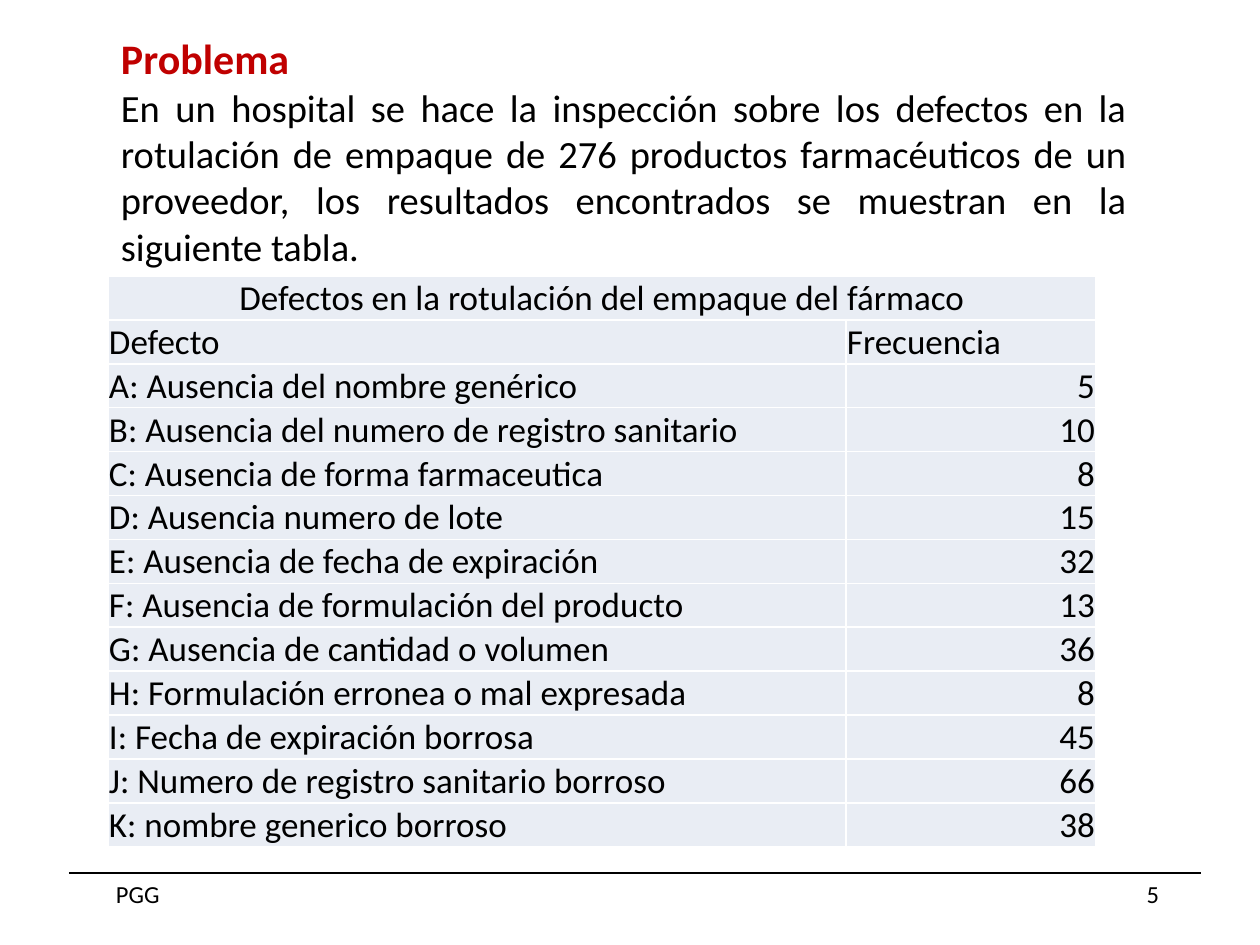
from dataclasses import dataclass

from lxml.etree import SubElement
from pptx import Presentation
from pptx.dml.color import RGBColor
from pptx.enum.shapes import MSO_CONNECTOR
from pptx.enum.text import MSO_ANCHOR, MSO_AUTO_SIZE, PP_ALIGN
from pptx.oxml.ns import qn
from pptx.util import Pt

PX = 914400 // 126

TITLE = "Problema"
STATEMENT = (
    "En un hospital se hace la inspección sobre los defectos en la rotulación "
    "de empaque de 276 productos farmacéuticos de un proveedor, los resultados "
    "encontrados se muestran en la siguiente tabla."
)
CAPTION = "Defectos en la rotulación del empaque del fármaco"
HEADER = ("Defecto", "Frecuencia")
DEFECTS = [
    ("A: Ausencia del nombre genérico", 5),
    ("B: Ausencia del numero de registro sanitario", 10),
    ("C: Ausencia de forma farmaceutica", 8),
    ("D: Ausencia numero de lote", 15),
    ("E: Ausencia de fecha de expiración", 32),
    ("F: Ausencia de formulación del producto", 13),
    ("G: Ausencia de cantidad o volumen", 36),
    ("H: Formulación erronea o mal expresada", 8),
    ("I: Fecha de expiración borrosa", 45),
    ("J: Numero de registro sanitario borroso", 66),
    ("K: nombre generico borroso", 38),
]
FOOTER = "PGG"
PAGE = "5"

TITLE_BOX = (108, 26, 1032, 58)
STATEMENT_BOX = (108, 84, 1032, 192)
TABLE_AT = (108, 276)
COLUMNS = (738, 250)
ROW = 43
FOOTER_BOX = (98, 873, 276, 43)
PAGE_BOX = (896, 873, 276, 43)
RULE = (69, 873, 1201, 873)


@dataclass(frozen=True)
class Theme:
    font: str = "Calibri"
    ink: str = "000000"
    accent: str = "C00000"
    cell: str = "E9EDF4"
    grid: str = "FFFFFF"
    title: int = 24
    body: int = 22
    table: int = 20
    footer: int = 14


THEME = Theme()


def px(values):
    return [v * PX for v in values]


def write(tf, text, size, align, color=THEME.ink, bold=False):
    p = tf.paragraphs[0]
    p.alignment = align
    p.space_before = Pt(0)
    r = p.add_run()
    r.text = text
    r.font.name = THEME.font
    r.font.size = Pt(size)
    r.font.bold = bold
    r.font.color.rgb = RGBColor.from_string(color)


def setup(tf, insets, anchor=MSO_ANCHOR.TOP):
    tf.word_wrap = True
    tf.auto_size = MSO_AUTO_SIZE.NONE
    tf.vertical_anchor = anchor
    tf.margin_left, tf.margin_top, tf.margin_right, tf.margin_bottom = px(insets)


def place(sp, box):
    sp.left, sp.top, sp.width, sp.height = px(box)


def add_heading(s):
    title, body = s.placeholders
    place(title, TITLE_BOX)
    setup(title.text_frame, (13, 6, 13, 0))
    write(title.text_frame, TITLE, THEME.title, PP_ALIGN.JUSTIFY, THEME.accent, True)

    place(body, STATEMENT_BOX)
    setup(body.text_frame, (13, 0, 13, 0))
    pPr = body.text_frame.paragraphs[0]._p.get_or_add_pPr()
    pPr.set("marL", "0")
    pPr.set("indent", "0")
    SubElement(pPr, qn("a:buNone"))
    write(body.text_frame, STATEMENT, THEME.body, PP_ALIGN.JUSTIFY)


def style_cell(cell):
    cell.vertical_anchor = MSO_ANCHOR.BOTTOM
    cell.margin_left = cell.margin_top = cell.margin_right = PX
    cell.margin_bottom = 0
    tcPr = cell._tc.get_or_add_tcPr()
    for side in ("lnL", "lnR", "lnT", "lnB"):
        ln = SubElement(tcPr, qn(f"a:{side}"), w=str(Pt(1)))
        fill = SubElement(ln, qn("a:solidFill"))
        SubElement(fill, qn("a:srgbClr"), val=THEME.grid)
    cell.fill.solid()
    cell.fill.fore_color.rgb = RGBColor.from_string(THEME.cell)


def add_defects(s):
    rows = [(CAPTION, ""), HEADER, *DEFECTS]
    box = (*TABLE_AT, sum(COLUMNS), ROW * len(rows))
    table = s.shapes.add_table(len(rows), len(COLUMNS), *px(box)).table
    table.first_row = table.horz_banding = False
    for column, width in zip(table.columns, COLUMNS):
        column.width = width * PX
    table.cell(0, 0).merge(table.cell(0, 1))
    for i, row in enumerate(rows):
        table.rows[i].height = ROW * PX
        for j, value in enumerate(row):
            cell = table.cell(i, j)
            style_cell(cell)
            if cell.is_spanned:
                continue
            align = PP_ALIGN.RIGHT if isinstance(value, int) else PP_ALIGN.LEFT
            if cell.is_merge_origin:
                align = PP_ALIGN.CENTER
            write(cell.text_frame, str(value), THEME.table, align)


def add_footer(s):
    for box, text, align, left in (
        (FOOTER_BOX, FOOTER, PP_ALIGN.LEFT, 18),
        (PAGE_BOX, PAGE, PP_ALIGN.RIGHT, 13),
    ):
        tf = s.shapes.add_textbox(*px(box)).text_frame
        setup(tf, (left, 6, 13, 6))
        write(tf, text, THEME.footer, align)
    rule = s.shapes.add_connector(MSO_CONNECTOR.STRAIGHT, *px(RULE))
    rule.line.color.rgb = RGBColor.from_string(THEME.ink)
    rule.line.width = Pt(0.75)
    SubElement(rule._element.spPr, qn("a:effectLst"))


def main():
    prs = Presentation()
    prs.slide_width, prs.slide_height = px((1260, 945))
    s = prs.slides.add_slide(prs.slide_layouts[1])
    add_heading(s)
    add_defects(s)
    add_footer(s)
    prs.save("out.pptx")


if __name__ == "__main__":
    main()
